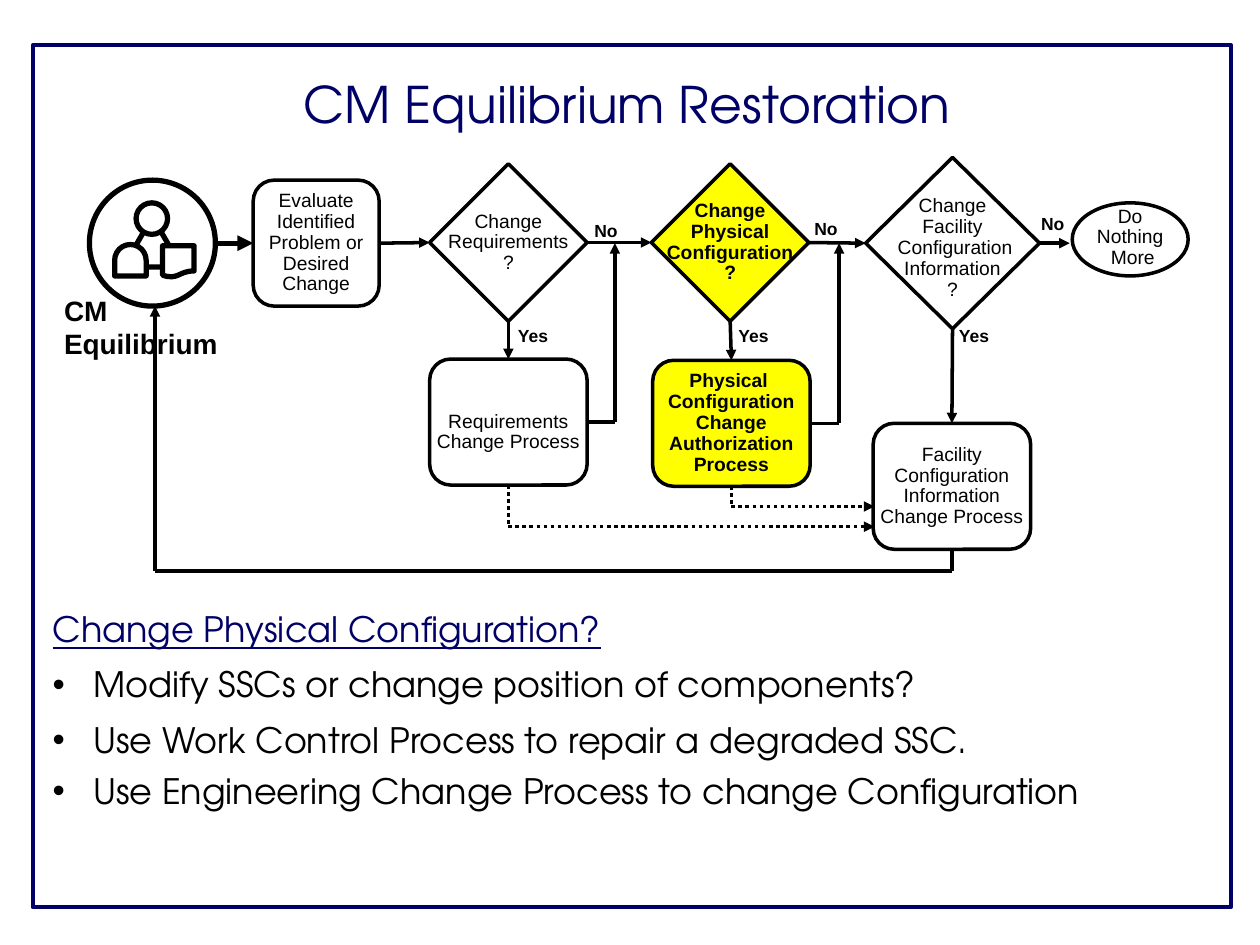
from copy import deepcopy

from lxml import etree
from pptx import Presentation
from pptx.dml.color import RGBColor
from pptx.enum.dml import MSO_LINE
from pptx.enum.shapes import MSO_CONNECTOR, MSO_SHAPE
from pptx.enum.text import MSO_ANCHOR, PP_ALIGN
from pptx.oxml.ns import qn
from pptx.util import Inches, Pt

OVAL, DIAMOND, FRAME = MSO_SHAPE.OVAL, MSO_SHAPE.DIAMOND, MSO_SHAPE.RECTANGLE
ROUNDED, TRIANGLE = MSO_SHAPE.ROUNDED_RECTANGLE, MSO_SHAPE.ISOSCELES_TRIANGLE
DOCUMENT, DELAY = MSO_SHAPE.FLOWCHART_DOCUMENT, MSO_SHAPE.FLOWCHART_DELAY
STRAIGHT, DOTTED = MSO_CONNECTOR.STRAIGHT, MSO_LINE.ROUND_DOT
CENTER, LEFT = PP_ALIGN.CENTER, PP_ALIGN.LEFT
MIDDLE, TOP_ANCHOR, BOTTOM_ANCHOR = MSO_ANCHOR.MIDDLE, MSO_ANCHOR.TOP, MSO_ANCHOR.BOTTOM
TOP, WEST, BOTTOM, EAST = range(4)

COLORS = {"navy": "000066", "black": "000000", "white": "FFFFFF", "yellow": "FFFF00"}
COLUMNS, ROWS = 100, 75
BODY_FONT, CHART_FONT = "TeX Gyre Adventor", "Arial"


def color(name):
    return RGBColor.from_string(COLORS[name])


def apply(target, values):
    for name, value in values.items():
        setattr(target, name, value)


class FlowSlide:
    """Draws on one slide; all lengths are columns and rows of its grid."""

    def __init__(self, deck):
        self.slide = deck.slides.add_slide(deck.slide_layouts[6])
        self.shapes = self.slide.shapes
        self.column = deck.slide_width / COLUMNS
        self.row = deck.slide_height / ROWS

    def place(self, *lengths):
        units = (self.column, self.row) * 2
        return [round(length * unit) for length, unit in zip(lengths, units)]

    def set_text(self, paragraph, text, ink="black", font=None, **layout):
        paragraph.text = text
        apply(paragraph, layout)
        for run in paragraph.runs:
            apply(run.font, font)
            run.font.color.rgb = color(ink)
        # Line breaks keep the size of the text around them.
        for line_break in paragraph._p.findall(qn("a:br")):
            line_break.insert(0, deepcopy(paragraph.runs[0]._r.rPr))

    def outline(self, line, ink, width, dash=None):
        line.color.rgb = color(ink)
        line.width = Pt(width)
        if dash:
            line.dash_style = dash

    def shape(self, kind, at, fill="white", width=2, ink="black", rotation=0):
        shape = self.shapes.add_shape(kind, *self.place(*at))
        shape.shadow.inherit = False
        shape.rotation = rotation
        if fill:
            shape.fill.solid()
            shape.fill.fore_color.rgb = color(fill)
        else:
            shape.fill.background()
        self.outline(shape.line, ink, width)
        return shape

    def step(self, kind, at, paragraphs, fill="white", bold=False, **margins):
        """A flowchart node with centred, unwrapped text."""
        node = self.shape(kind, at, fill)
        frame = node.text_frame
        apply(frame, {"word_wrap": False, "vertical_anchor": MIDDLE, **margins})
        for index, text in enumerate(paragraphs):
            paragraph = frame.add_paragraph() if index else frame.paragraphs[0]
            self.set_text(paragraph, text, alignment=CENTER, line_spacing=0.9,
                          font={"name": CHART_FONT, "size": Pt(11), "bold": bold})
        return node

    def text(self, at, text, size, ink="black", face=CHART_FONT, bold=True,
             align=LEFT, anchor=TOP_ANCHOR):
        frame = self.shapes.add_textbox(*self.place(*at)).text_frame
        apply(frame, {"word_wrap": True, "vertical_anchor": anchor})
        self.set_text(frame.paragraphs[0], text, ink, alignment=align,
                      font={"name": face, "size": Pt(size), "bold": bold})
        return frame

    def bullet(self, frame, text, spacing, before):
        paragraph = frame.add_paragraph()
        self.set_text(paragraph, text, line_spacing=spacing, space_before=Pt(before),
                      font={"name": BODY_FONT, "size": Pt(20)})
        properties = paragraph._p.get_or_add_pPr()
        indent = Inches(0.32)
        properties.set("marL", str(indent))
        properties.set("indent", str(-indent))
        etree.SubElement(properties, qn("a:buFont"), typeface=CHART_FONT)
        etree.SubElement(properties, qn("a:buChar"), char="•")

    def flow(self, *stops, width=2, dash=None, arrow=True):
        """Lines through stops, each an (x, y) point or a (shape, side) joint."""
        for start, end in zip(stops, stops[1:]):
            ends = [stop if isinstance(stop[0], (int, float)) else (0, 0)
                    for stop in (start, end)]
            line = self.shapes.add_connector(STRAIGHT, *self.place(*ends[0], *ends[1]))
            for stop, join in ((start, line.begin_connect), (end, line.end_connect)):
                if not isinstance(stop[0], (int, float)):
                    join(*stop)
            self.outline(line.line, "black", width, dash)
            if arrow and end is stops[-1]:
                outline = line._element.spPr.find(qn("a:ln"))
                etree.SubElement(outline, qn("a:tailEnd"), type="triangle")
            etree.SubElement(line._element.spPr, qn("a:effectLst"))


def main():
    deck = Presentation()
    deck.slide_width, deck.slide_height = Inches(10), Inches(7.5)
    page = FlowSlide(deck)

    page.text((23.1, 5.3, 63.3, 5.8), "CM Equilibrium Restoration", 28.8, "navy",
              BODY_FONT, bold=False, anchor=BOTTOM_ANCHOR)
    notes = page.text((3.2, 48.1, 96.8, 20.7), "Change Physical Configuration?", 20,
                      "navy", BODY_FONT, bold=False)
    heading = notes.paragraphs[0]
    heading.line_spacing = 0.9
    heading.runs[0].font.underline = True
    for point, spacing, before in (
        ("Modify SSCs or change position of components?", 0.9, 10),
        ("Use Work Control Process to repair a degraded SSC.", 0.9, 10),
        ("Use Engineering Change Process to change Configuration", Pt(23), 6),
    ):
        page.bullet(notes, point, spacing, before)

    # Equilibrium symbol
    for kind, at, fill, rotation in (
        (OVAL, (7.1, 14.3, 10, 10), "white", 0),
        (TRIANGLE, (9.8, 17.2, 4.6, 4), None, 0),
        (OVAL, (10.8, 16.1, 2.5, 2.5), "white", 0),
        (DOCUMENT, (12.9, 19.5, 2.5, 2.5), "white", 0),
        (DELAY, (9.1, 19.4, 2.5, 2.5), "white", 270),
    ):
        page.shape(kind, at, fill, width=3, rotation=rotation)
    page.text((4.1, 22.8, 14.5, 6.4), "CM Equilibrium", 16)

    # Decisions and processes
    evaluate = page.step(ROUNDED, (20.1, 14.3, 10, 10),
                         ["Evaluate\nIdentified\nProblem or\nDesired\nChange"])
    requirements = page.step(DIAMOND, (34.1, 13, 12.5, 12.5),
                             ["Change", "Requirements\n?"])
    physical = page.step(DIAMOND, (51.7, 13, 12.5, 12.5),
                         ["Change\nPhysical\nConfiguration\n?"], "yellow", bold=True)
    facility = page.step(DIAMOND, (68.7, 12.5, 13.8, 13.6),
                         ["Change\nFacility", " Configuration\nInformation\n?"], None,
                         margin_left=0, margin_right=0, margin_bottom=0,
                         margin_top=Inches(0.08))
    page.step(OVAL, (85.1, 16.1, 9.2, 5.8), ["Do\nNothing\n More"], None,
              margin_top=Inches(0.02))
    requirements_process = page.step(ROUNDED, (34.1, 28.5, 12.5, 10),
                                     ["Requirements\nChange Process"],
                                     margin_top=Inches(0.21))
    physical_process = page.step(
        ROUNDED, (51.8, 28.6, 12.5, 10),
        ["Physical \nConfiguration\nChange\nAuthorization\nProcess"], "yellow", bold=True)
    facility_process = page.step(ROUNDED, (69.3, 33.6, 12.5, 10),
                                 ["Facility", "Configuration\nInformation\nChange Process"],
                                 None)

    # Main path, then each decision's way down
    page.flow((17.1, 19.3), (evaluate, WEST), width=3)
    page.flow((evaluate, EAST), (requirements, WEST))
    page.flow((requirements, EAST), (physical, WEST))
    page.flow((physical, EAST), (facility, WEST))
    page.flow((facility, EAST), (84.9, 19.3))
    for decision, process in ((requirements, requirements_process),
                              (physical, physical_process),
                              (facility, facility_process)):
        page.flow((decision, BOTTOM), (process, TOP))

    # Returns to the main path, and dotted links to the facility process
    for process, return_x, middle_y, link_x, link_y in (
        (requirements_process, 48.8, 33.5, 40.35, 41.8),
        (physical_process, 66.6, 33.6, 58.05, 40.2),
    ):
        page.flow((process, EAST), (return_x, middle_y), (return_x, 19.3))
        page.flow((process, BOTTOM), (link_x, link_y), (69.4, link_y), dash=DOTTED)
    page.flow((facility_process, BOTTOM), (75.55, 45.3), (12.3, 45.3), (12.3, 24.3))

    for answer, left, top, width in (
        ("No", 45.1, 17, 6), ("No", 63.4, 16.8, 4.3), ("No", 81.2, 16.4, 4.7),
        ("Yes", 39.3, 25.3, 6), ("Yes", 56.8, 25.3, 6), ("Yes", 74.3, 25.3, 6),
    ):
        page.text((left, top, width, 2.7), answer, 10, align=CENTER)

    page.shape(FRAME, (2.6, 3.6, 95.1, 68.4), None, width=2.5, ink="navy")
    deck.save("out.pptx")


if __name__ == "__main__":
    main()
